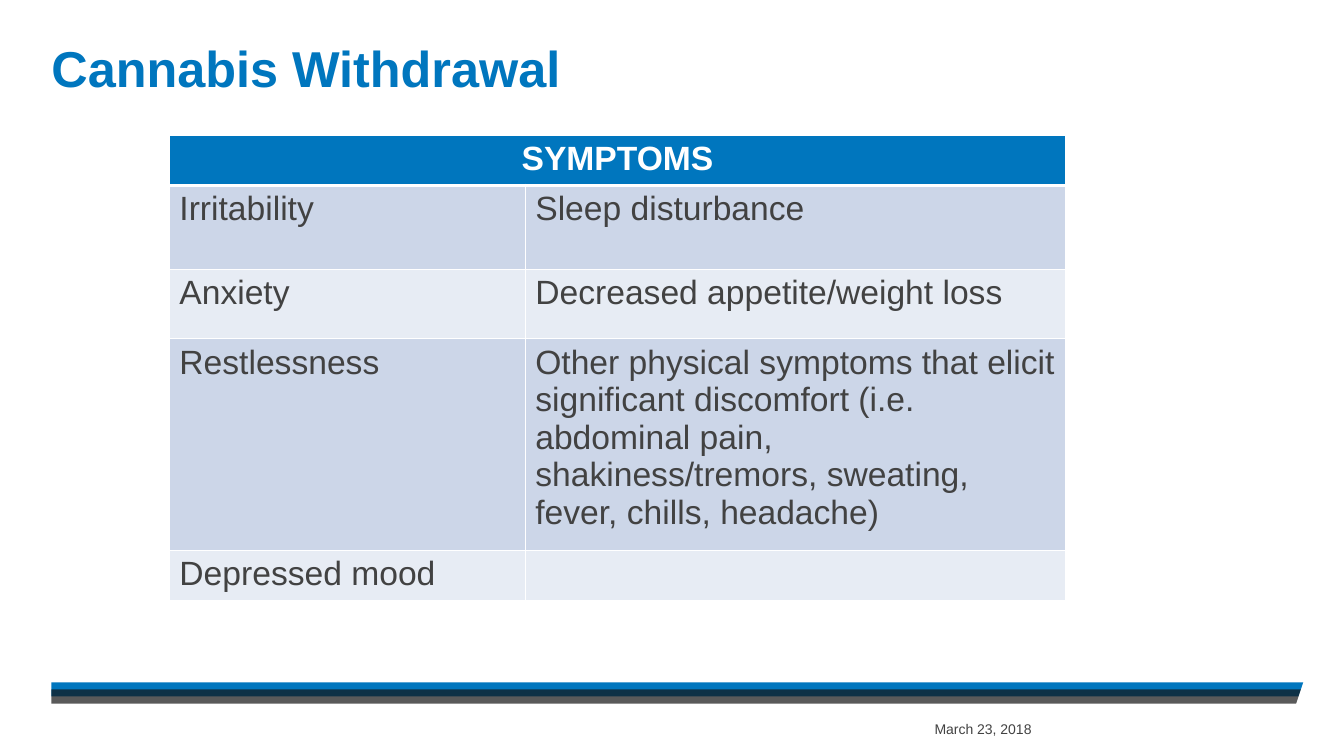
from dataclasses import dataclass
from typing import Any

from lxml.etree import SubElement
from pptx import Presentation
from pptx.dml.color import RGBColor
from pptx.enum.shapes import MSO_SHAPE as Preset
from pptx.enum.text import MSO_ANCHOR as Anchor, PP_ALIGN as Align
from pptx.oxml.ns import qn
from pptx.util import Pt

EMU_PER_PX = 9144


@dataclass(frozen=True)
class Theme:
    font: str = "Arial"
    blue: str = "0076BE"
    shade: str = "141414"
    ink: str = "424242"
    white: str = "FFFFFF"
    bands: tuple[str, str] = ("CCD6E8", "E7ECF4")
    title_size: int = 36
    table_size: int = 24
    date_size: int = 10


THEME = Theme()


@dataclass(frozen=True)
class Box:
    left: int
    top: int
    width: int
    height: int

    def emu(self) -> tuple[int, ...]:
        return tuple(map(px, (self.left, self.top, self.width, self.height)))


@dataclass(frozen=True)
class Stripe:
    box: Box
    color: str
    opacity: int = 100


@dataclass(frozen=True)
class Label:
    box: Box
    text: str
    size: int
    color: str
    bold: bool
    paragraph_format: dict[str, Any]
    frame_format: dict[str, Any]


@dataclass(frozen=True)
class SymptomRow:
    left: str
    right: str
    height: int


STRIPES = (
    Stripe(Box(51, 677, 1243, 14), THEME.blue),
    Stripe(Box(51, 684, 1243, 14), THEME.shade, 70),
)
STRIPE_CUT = ((1285, 700), (1293, 676), (1297, 676), (1297, 700))

LABELS = (
    Label(Box(51, 46, 1231, 105), "Cannabis Withdrawal", THEME.title_size,
          THEME.blue, True, {"line_spacing": 0.85},
          {"margin_left": 0, "margin_top": 0, "margin_right": 0, "margin_bottom": 0}),
    Label(Box(893, 712, 164, 23), "March 23, 2018", THEME.date_size,
          THEME.ink, False, {"alignment": Align.CENTER},
          {"vertical_anchor": Anchor.MIDDLE}),
)

TABLE_LEFT, TABLE_TOP = 168, 134
COLUMN_WIDTHS = (353, 536)
HEADER, HEADER_HEIGHT = "SYMPTOMS", 49
SYMPTOMS = (
    SymptomRow("Irritability", "Sleep disturbance", 83),
    SymptomRow("Anxiety", "Decreased appetite/weight loss", 69),
    SymptomRow("Restlessness",
               "Other physical symptoms that elicit significant discomfort "
               "(i.e. abdominal pain, shakiness/tremors, sweating, fever, "
               "chills, headache)", 196),
    SymptomRow("Depressed mood", "", 49),
)


def px(length: int) -> int:
    return length * EMU_PER_PX


def apply(target: Any, values: dict[str, Any]) -> None:
    for name, value in values.items():
        setattr(target, name, value)


def paint(target: Any, color: str) -> None:
    target.fill.solid()
    target.fill.fore_color.rgb = RGBColor.from_string(color)


def finish(shape: Any, color: str) -> None:
    paint(shape, color)
    shape.line.fill.background()
    shape.shadow.inherit = False


def write(paragraph: Any, text: str, size: int, color: str, bold: bool) -> None:
    run = paragraph.add_run()
    run.text = text
    apply(run.font, {"name": THEME.font, "size": Pt(size), "bold": bold})
    run.font.color.rgb = RGBColor.from_string(color)


def draw_stripe(slide: Any, stripe: Stripe) -> None:
    shape = slide.shapes.add_shape(Preset.RECTANGLE, *stripe.box.emu())
    finish(shape, stripe.color)
    if stripe.opacity < 100:
        color = shape.fill._xPr.find(qn("a:solidFill"))[0]
        SubElement(color, qn("a:alpha"), val=str(stripe.opacity * 1000))


def draw_stripe_cut(slide: Any) -> None:
    start, *corners = STRIPE_CUT
    builder = slide.shapes.build_freeform(*start, scale=EMU_PER_PX)
    builder.add_line_segments(corners, close=True)
    finish(builder.convert_to_shape(), THEME.white)


def draw_label(slide: Any, label: Label) -> None:
    frame = slide.shapes.add_textbox(*label.box.emu()).text_frame
    apply(frame, {"word_wrap": True, **label.frame_format})
    paragraph = frame.paragraphs[0]
    apply(paragraph, label.paragraph_format)
    write(paragraph, label.text, label.size, label.color, label.bold)


def set_borders(cell: Any, bottom: int) -> None:
    properties = cell._tc.get_or_add_tcPr()
    widths = {"a:lnL": 1, "a:lnR": 1, "a:lnT": 1, "a:lnB": bottom}
    for position, (tag, width) in enumerate(widths.items()):
        line = properties.makeelement(qn(tag), {"w": str(Pt(width))})
        properties.insert(position, line)
        fill = SubElement(line, qn("a:solidFill"))
        SubElement(fill, qn("a:srgbClr"), val=THEME.white)


def draw_table(slide: Any) -> None:
    heights = (HEADER_HEIGHT, *(row.height for row in SYMPTOMS))
    box = Box(TABLE_LEFT, TABLE_TOP, sum(COLUMN_WIDTHS), sum(heights))
    table = slide.shapes.add_table(len(heights), len(COLUMN_WIDTHS), *box.emu()).table
    for column, width in zip(table.columns, COLUMN_WIDTHS):
        column.width = px(width)
    for table_row, height in zip(table.rows, heights):
        table_row.height = px(height)

    header = table.cell(0, 0)
    header.merge(table.cell(0, 1))
    paragraph = header.text_frame.paragraphs[0]
    paragraph.alignment = Align.CENTER
    write(paragraph, HEADER, THEME.table_size, THEME.white, True)
    for cell in table.rows[0].cells:
        paint(cell, THEME.blue)
        set_borders(cell, bottom=3)

    for index, symptom in enumerate(SYMPTOMS):
        for column, text in enumerate((symptom.left, symptom.right)):
            cell = table.cell(index + 1, column)
            paint(cell, THEME.bands[index % 2])
            set_borders(cell, bottom=1)
            if text:
                write(cell.text_frame.paragraphs[0], text,
                      THEME.table_size, THEME.ink, False)


def main() -> None:
    presentation = Presentation()
    apply(presentation, {"slide_width": px(1333), "slide_height": px(750)})
    slide = presentation.slides.add_slide(presentation.slide_layouts[6])
    paint(slide.background, THEME.white)
    for stripe in STRIPES:
        draw_stripe(slide, stripe)
    draw_stripe_cut(slide)
    for label in LABELS:
        draw_label(slide, label)
    draw_table(slide)
    presentation.save("out.pptx")


if __name__ == "__main__":
    main()
